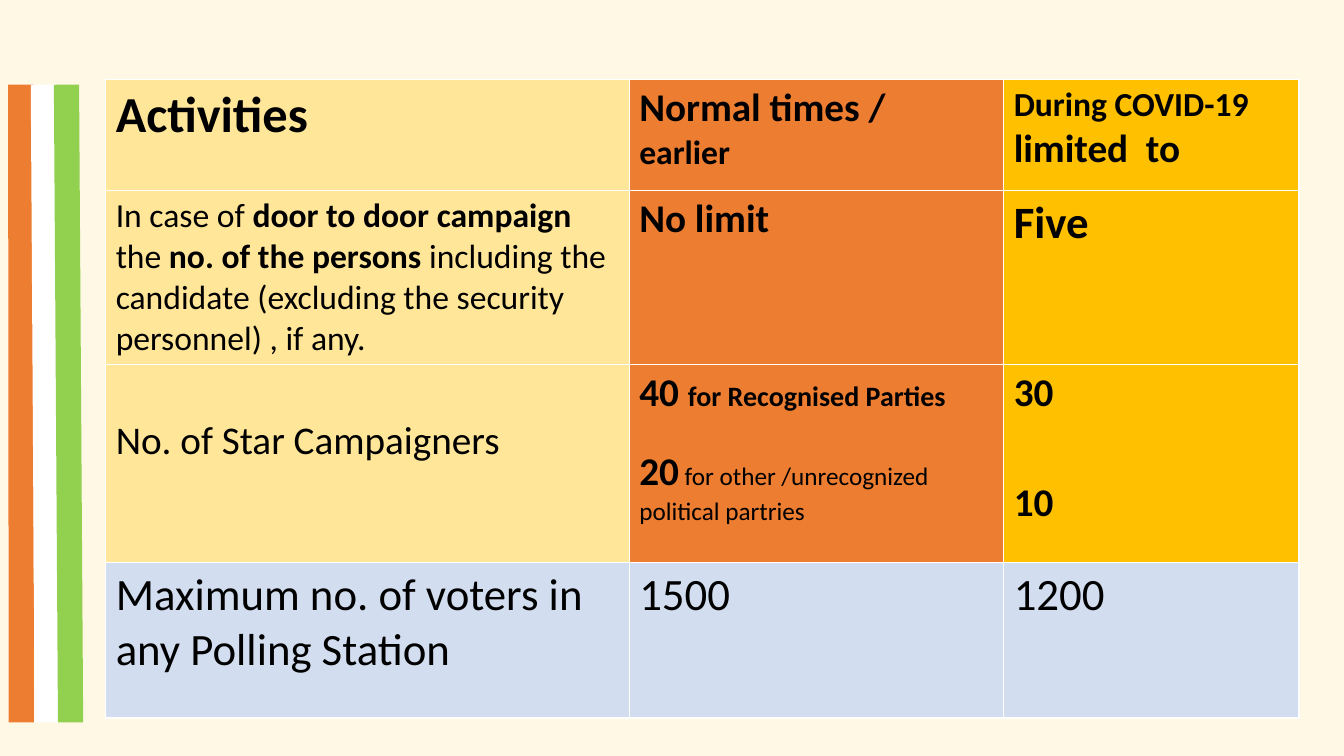
import pptx
import pptx.util
import pptx.dml.color
import pptx.enum.shapes
import lxml.etree

Pt = pptx.util.Pt
RGB = pptx.dml.color.RGBColor.from_string
HUES = {
    "page": "FFF8E5", "cream": "FFE699", "orange": "ED7D31", "gold": "FFC000",
    "blue": "D2DEEF", "white": "FFFFFF", "green": "92D050", "ink": "000000",
}

deck = pptx.Presentation()
deck.slide_width, deck.slide_height = Pt(960), Pt(540)
slide = deck.slides.add_slide(deck.slide_layouts[6])
slide.background.fill.solid()
slide.background.fill.fore_color.rgb = RGB(HUES["page"])

# Stripes: colour, x at the top, x at the foot
for hue, top, foot in [("orange", 14.8, 15.2), ("white", 31, 33.8), ("green", 47.5, 50.4)]:
    stripe = slide.shapes.add_connector(
        pptx.enum.shapes.MSO_CONNECTOR.STRAIGHT, Pt(top), Pt(60.5), Pt(foot), Pt(516))
    stripe.line.color.rgb = RGB(HUES[hue])
    stripe.line.width = Pt(18)
    lxml.etree.SubElement(stripe._element.spPr, pptx.oxml.ns.qn("a:effectLst"))

# A cell is a list of paragraphs: (space before, [(text, size, bold), ...])
rows = [
    [[(0, [("Activities", 36, True)])],
     [(0, [("Normal times /", 28, True)]), (0, [("earlier", 24, True)])],
     [(0, [("During COVID-19", 24, True)]), (0, [("limited  to", 28, True)])]],
    [[(0, [("In case of ", 24, False), ("door to door campaign ", 24, True),
           ("the ", 24, False), ("no. of the persons ", 24, True),
           ("including the candidate (excluding the security personnel) , if any.", 24, False)])],
     [(0, [("No limit", 28, True)])],
     [(0, [("Five", 32, True)])]],
    [[(0, [("No. of Star Campaigners", 28, False)])],
     [(0, [("40 ", 28, True), ("for Recognised Parties", 20, True)]),
      (22, [("20", 28, True), (" for other /unrecognized political partries", 18, False)])],
     [(0, [("30", 28, True)]), (44, [("10", 28, True)])]],
    [[(0, [("Maximum no. of voters in any Polling Station", 32, False)])],
     [(0, [("1500", 32, False)])],
     [(0, [("1200", 32, False)])]],
]
fills = [["cream", "orange", "gold"]] * 3 + [["blue"] * 3]
widths = [374, 267.5, 211]
heights = [79.2, 124.3, 141.5, 111]

table = slide.shapes.add_table(
    4, 3, Pt(75.5), Pt(56.8), Pt(sum(widths)), Pt(sum(heights))).table
table.horz_banding = False
for col, width in zip(table.columns, widths):
    col.width = Pt(width)
for r, row in enumerate(rows):
    table.rows[r].height = Pt(heights[r])
    for c, paras in enumerate(row):
        cell = table.cell(r, c)
        cell.fill.solid()
        cell.fill.fore_color.rgb = RGB(HUES[fills[r][c]])
        for n, (space, runs) in enumerate(paras):
            frame = cell.text_frame
            para = frame.add_paragraph() if n else frame.paragraphs[0]
            if space:
                para.space_before = Pt(space)
            para.font.name = "Calibri"
            para.font.color.rgb = RGB(HUES["ink"])
            sizes = {size for _, size, _ in runs}
            bolds = {bold for _, _, bold in runs}
            if len(sizes) == 1:
                para.font.size = Pt(runs[0][1])
            if len(bolds) == 1:
                para.font.bold = runs[0][2]
            for text, size, bold in runs:
                run = para.add_run()
                run.text = text
                if len(sizes) > 1:
                    run.font.size = Pt(size)
                if len(bolds) > 1:
                    run.font.bold = bold

# The campaigner label sits one line down
table.cell(2, 0).margin_top = Pt(37.8)

deck.save("out.pptx")
